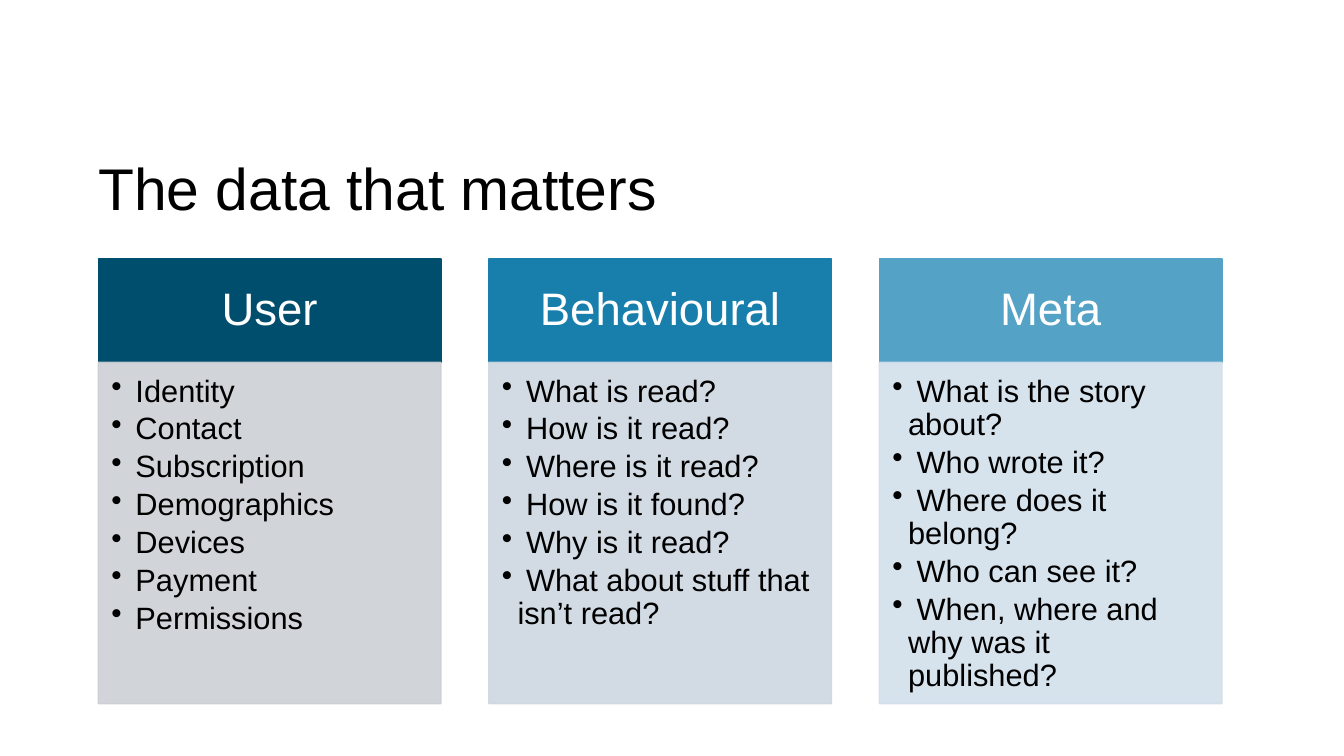
import pptx
import pptx.dml.color
import pptx.enum.shapes
import pptx.enum.text
import pptx.oxml
import pptx.oxml.ns
import pptx.util
from lxml import etree

RGBColor = pptx.dml.color.RGBColor
Inches, Pt = pptx.util.Inches, pptx.util.Pt
ALIGN = pptx.enum.text.PP_ALIGN
ANCHOR = pptx.enum.text.MSO_ANCHOR

BLACK = RGBColor(0x00, 0x00, 0x00)
WHITE = RGBColor(0xFF, 0xFF, 0xFF)
NAVY = RGBColor(0x00, 0x4E, 0x6D)
BLUE = RGBColor(0x18, 0x7F, 0xAC)
SKY = RGBColor(0x55, 0xA2, 0xC7)
GREY = RGBColor(0xCC, 0xD0, 0xD4)
MIST = RGBColor(0xCE, 0xD7, 0xE1)
ICE = RGBColor(0xD2, 0xDF, 0xEB)

COLUMNS = [
    ("User", NAVY, GREY,
     ["Identity", "Contact", "Subscription", "Demographics", "Devices",
      "Payment", "Permissions"]),
    ("Behavioural", BLUE, MIST,
     ["What is read?", "How is it read?", "Where is it read?",
      "How is it found?", "Why is it read?",
      "What about stuff that isn’t read?"]),
    ("Meta", SKY, ICE,
     ["What is the story about?", "Who wrote it?", "Where does it belong?",
      "Who can see it?", "When, where and why was it published?"]),
]


class Deck:
    FONT = "Arial"
    TITLE_SIZE, HEAD_SIZE, BODY_SIZE = Pt(84), Pt(65), Pt(44)
    LEFT, COLUMN, GAP = Inches(1.95), Inches(6.8), Inches(0.95)
    # Top and height of each grid row
    ROWS = {
        "title": (Inches(2.97), Inches(1.48)),
        "head": (Inches(5.14), Inches(2.05)),
        "body": (Inches(7.19), Inches(6.77)),
    }

    def __init__(self, prs):
        self.s = prs.slides.add_slide(prs.slide_layouts[5])
        self.group = self.s.shapes.add_group_shape()

    def cell(self, column, row, span=1):
        """Left, top, width and height of a grid cell."""
        top, height = self.ROWS[row]
        left = self.LEFT + column * (self.COLUMN + self.GAP)
        return left, top, span * self.COLUMN + (span - 1) * self.GAP, height

    def frame(self, sp, anchor, insets):
        tf = sp.text_frame
        tf.word_wrap = True
        tf.auto_size = pptx.enum.text.MSO_AUTO_SIZE.NONE
        tf.vertical_anchor = anchor
        (tf.margin_left, tf.margin_top,
         tf.margin_right, tf.margin_bottom) = map(Inches, insets)
        return tf

    def add_text(self, p, text, size, color, align=ALIGN.LEFT):
        p.alignment = align
        r = p.add_run()
        r.text = text
        r.font.name, r.font.size = self.FONT, size
        r.font.color.rgb = color

    def title(self, text):
        sp = self.s.shapes.title
        sp.left, sp.top, sp.width, sp.height = self.cell(0, "title", span=3)
        tf = self.frame(sp, ANCHOR.MIDDLE, (0, 0, 0, 0))
        self.add_text(tf.paragraphs[0], text, self.TITLE_SIZE, BLACK)

    def box(self, column, row, color, opacity=100):
        sp = self.group.shapes.add_shape(
            pptx.enum.shapes.MSO_SHAPE.RECTANGLE, *self.cell(column, row))
        sp.shadow.inherit = False
        sp.line.width = Pt(2)
        for fill in (sp.fill, sp.line.fill):
            fill.solid()
            fill.fore_color.rgb = color
        if opacity < 100:
            for clr in sp._element.spPr.iter(pptx.oxml.ns.qn("a:srgbClr")):
                etree.SubElement(clr, pptx.oxml.ns.qn("a:alpha"),
                                 val=str(opacity * 1000))
        return sp

    def heading(self, column, text, color):
        sp = self.box(column, "head", color)
        tf = self.frame(sp, ANCHOR.MIDDLE, (0.51, 0.29, 0.51, 0.29))
        p = tf.paragraphs[0]
        p.line_spacing = 0.9
        self.add_text(p, text, self.HEAD_SIZE, WHITE, ALIGN.CENTER)

    def bullets(self, column, items, color):
        sp = self.box(column, "body", color, opacity=90)
        tf = self.frame(sp, ANCHOR.TOP, (0.26, 0.26, 0.34, 0.39))
        for i, item in enumerate(items):
            p = tf.add_paragraph() if i else tf.paragraphs[0]
            p.level = 1
            pPr = p._p.get_or_add_pPr()
            pPr.set("marL", str(Inches(0.31)))
            pPr.set("indent", str(-Inches(0.31)))
            etree.SubElement(pPr, pptx.oxml.ns.qn("a:buChar"), char="•")
            p.line_spacing = 0.9
            p.space_after = Pt(6.6)
            self.add_text(p, " " + item, self.BODY_SIZE, BLACK)


def main():
    prs = pptx.Presentation()
    prs.slide_width, prs.slide_height = Inches(26.67), Inches(15)
    deck = Deck(prs)
    deck.title("The data that matters")
    for i, (name, dark, light, items) in enumerate(COLUMNS):
        deck.heading(i, name, dark)
        deck.bullets(i, items, light)
    prs.save("out.pptx")


if __name__ == "__main__":
    main()
